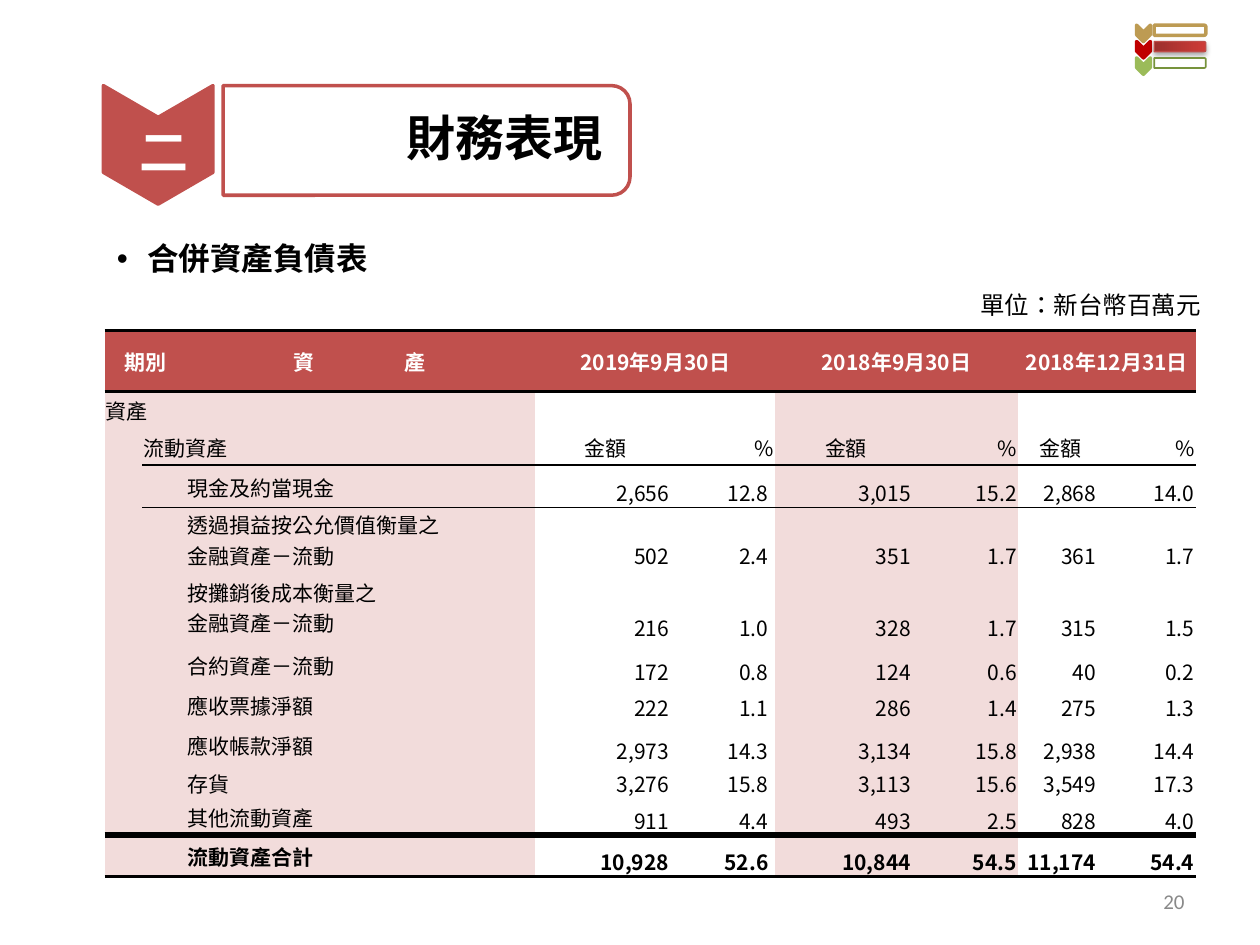
from lxml import etree
from pptx import Presentation
from pptx.dml.color import RGBColor
from pptx.enum.shapes import MSO_SHAPE as Shape
from pptx.enum.text import MSO_ANCHOR as Anchor, PP_ALIGN as Align
from pptx.oxml.ns import qn
from pptx.util import Inches, Pt

FONT = "Noto Sans CJK SC"
RED, PINK, WHITE, BLACK = "C0504D", "F2DCDB", "FFFFFF", "000000"
GOLD, GREEN, DARK_GREEN = "BD9B53", "9BBB59", "77933C"
NO_STYLE = "{2D5ABB26-0587-4C30-8999-92F81FD0307C}"

COLUMNS = [0.3, 0.35, 2.77, 1.11, 0.79, 1.13, 0.8, 0.67, 0.74]
ROW_HEIGHTS = [0.49, 0.29, 0.29, 0.34, 0.5, 0.57, 0.35, 0.29, 0.34, 0.26, 0.29, 0.33]
PERIODS = ["2019年9月30日", "2018年9月30日", "2018年12月31日"]
ASSETS = [
    ("現金及約當現金", "2,656", "12.8", "3,015", "15.2", "2,868", "14.0"),
    ("透過損益按公允價值衡量之\n金融資產－流動", "502", "2.4", "351", "1.7", "361", "1.7"),
    ("按攤銷後成本衡量之\n金融資產－流動", "216", "1.0", "328", "1.7", "315", "1.5"),
    ("合約資產－流動", "172", "0.8", "124", "0.6", "40", "0.2"),
    ("應收票據淨額", "222", "1.1", "286", "1.4", "275", "1.3"),
    ("應收帳款淨額", "2,973", "14.3", "3,134", "15.8", "2,938", "14.4"),
    ("存貨", "3,276", "15.8", "3,113", "15.6", "3,549", "17.3"),
    ("其他流動資產", "911", "4.4", "493", "2.5", "828", "4.0"),
    ("流動資產合計", "10,928", "52.6", "10,844", "54.5", "11,174", "54.4"),
]


def color(value):
    return RGBColor.from_string(value)


def add_xml(parent, tag, **attributes):
    return etree.SubElement(parent, qn(tag), {k: str(v) for k, v in attributes.items()})


def write(frame, text, size=12, font=FONT, ink=BLACK, bold=False, align=Align.LEFT,
          anchor=Anchor.TOP, spacing=None, bullet=None, tab=None):
    """Fill a text frame, one paragraph for each line of text."""
    frame.vertical_anchor = anchor
    for index, line in enumerate(text.split("\n")):
        para = frame.paragraphs[0] if index == 0 else frame.add_paragraph()
        para.alignment = align
        if spacing:
            para.line_spacing = spacing
        properties = para._p.get_or_add_pPr()
        if bullet:
            properties.set("marL", str(Inches(0.24)))
            properties.set("indent", str(-Inches(0.24)))
            add_xml(properties, "a:buFont", typeface="Arial")
            add_xml(properties, "a:buChar", char=bullet)
        if tab:
            add_xml(add_xml(properties, "a:tabLst"), "a:tab", pos=Inches(tab), algn="l")
        if not line:
            add_xml(para._p, "a:endParaRPr", sz=size * 100)
            continue
        span = para.add_run()
        span.text = line
        span.font.size, span.font.name, span.font.bold = Pt(size), font, bold
        span.font.color.rgb = color(ink)
        span.font._element.set("lang", "zh-TW")
        add_xml(span.font._element, "a:ea", typeface=font)


def add_text(page, box, text, margins=(0.1, 0.05, 0.1, 0.05), wrap=True, **style):
    frame = page.shapes.add_textbox(*map(Inches, box)).text_frame
    frame.word_wrap = wrap
    (frame.margin_left, frame.margin_top,
     frame.margin_right, frame.margin_bottom) = map(Inches, margins)
    write(frame, text, **style)


def add_turned(page, kind, box, fill=None, line=None, width=2, alpha=None):
    """Place a shape turned by 90 degrees so that it covers the given box."""
    left, top, wide, high = box
    shift = (wide - high) / 2
    shape = page.shapes.add_shape(
        kind, *map(Inches, (left + shift, top - shift, high, wide)))
    shape.rotation = 90
    shape.shadow.inherit = False
    if fill:
        shape.fill.solid()
        shape.fill.fore_color.rgb = color(fill)
        if alpha:
            tint = shape._element.spPr.find(".//" + qn("a:srgbClr"))
            add_xml(tint, "a:alpha", val=alpha * 1000)
    else:
        shape.fill.background()
    shape.line.color.rgb = color(line or fill)
    shape.line.width = Pt(width)
    return shape


def heading(page, left, top):
    # Rounded panel and title
    add_turned(page, Shape.ROUND_2_SAME_RECTANGLE, (left + 0.95, top, 3.23, 0.87),
               WHITE, RED, alpha=90)
    add_text(page, (left + 0.95, top, 4.66, 0.87), "財務表現", (1.46, 0.02, 0.02, 0.02),
             size=28, bold=True, anchor=Anchor.MIDDLE, spacing=0.9)
    # Chevron with the section number
    chevron = add_turned(page, Shape.CHEVRON, (left, top, 0.87, 0.94), RED)
    chevron.adjustments[0] = 0.29
    add_text(page, (left - 0.23, top + 0.32, 1.42, 0.45), "二", (0.02,) * 4, size=28,
             ink=WHITE, bold=True, align=Align.CENTER, anchor=Anchor.MIDDLE, spacing=0.9)


def section_marker(page, left, top):
    rows = [(GOLD, None, GOLD, 2), ("C00000", "CB3E3A", "BF4C48", 0.75),
            (GREEN, WHITE, DARK_GREEN, 1)]
    for index, (tip, fill, line, width) in enumerate(rows):
        y = top + 0.13 * index
        add_turned(page, Shape.CHEVRON, (left, y, 0.11, 0.13), tip)
        bar = add_turned(page, Shape.ROUND_2_SAME_RECTANGLE,
                         (left + 0.14, y, 0.41, 0.08), fill, line, width,
                         alpha=90 if fill == WHITE else None)
        if index == 1:  # current section: gradient and soft shadow
            bar.fill.gradient()
            bar.fill.gradient_angle = 90
            for stop, tint in zip(bar.fill.gradient_stops, ("9C2F2D", "CE3B37")):
                stop.color.rgb = color(tint)
            effects = bar._element.spPr.find(qn("a:effectLst"))
            shadow = add_xml(effects, "a:outerShdw", blurRad=Pt(3.1), dist=Pt(1.8),
                             dir=5400000, rotWithShape=0)
            add_xml(add_xml(shadow, "a:srgbClr", val=BLACK), "a:alpha", val=35000)


def cell_borders(row, column):
    """Widths of the top and bottom rules of a cell, in points."""
    last = len(ROW_HEIGHTS) - 1
    bottom = {0: 2, last - 1: 4, last: 2}.get(row)
    if row in (2, 3) and column > 0:
        bottom = 1
    return (("a:lnT", 2 if row == 0 else None), ("a:lnB", bottom))


def balance_sheet(page, left, top):
    table = page.shapes.add_table(
        len(ROW_HEIGHTS), len(COLUMNS), Inches(left), Inches(top),
        Inches(sum(COLUMNS)), Inches(sum(ROW_HEIGHTS))).table
    table.first_row = table.horz_banding = False
    table._tbl.tblPr.find(qn("a:tableStyleId")).text = NO_STYLE
    for column, width in zip(table.columns, COLUMNS):
        column.width = Inches(width)
    for row, height in zip(table.rows, ROW_HEIGHTS):
        row.height = Inches(height)

    # Text by row: header, group, subheader, then the assets
    header = ["期別", "", "資\t產"] + [text for name in PERIODS for text in (name, "")]
    rows = [header, ["資產"] + [""] * 8, ["", "流動資產", ""] + ["金額", "%"] * 3]
    rows += [["", "", *asset] for asset in ASSETS]
    for r, texts in enumerate(rows):
        for c, text in enumerate(texts):
            cell = table.cell(r, c)
            cell.margin_left = cell.margin_right = cell.margin_top = Inches(0.01)
            cell.margin_bottom = 0
            style = {"anchor": Anchor.MIDDLE, "bold": r in (0, len(rows) - 1)}
            if r == 0:
                style.update(ink=WHITE, align=Align.CENTER)
                if "\t" in text:
                    cell.margin_left = Inches(0.85)
                    style.update(align=Align.LEFT, tab=0.88)
            elif c > 2:
                amount = c % 2 == 1
                style["align"] = Align.CENTER if r == 2 and amount else Align.RIGHT
                if r > 2:
                    style["anchor"] = Anchor.BOTTOM
                    cell.margin_right = Inches(0.05 if amount or c == 4 else 0.01)
            write(cell.text_frame, text, **style)
            cell.vertical_anchor = style["anchor"]
            for tag, width in cell_borders(r, c):
                if width:
                    rule = add_xml(cell._tc.get_or_add_tcPr(), tag, w=Pt(width))
                    add_xml(add_xml(rule, "a:solidFill"), "a:srgbClr", val=BLACK)
            cell.fill.solid()
            shade = PINK if c < 3 or c in (5, 6) else WHITE
            cell.fill.fore_color.rgb = color(RED if r == 0 else shade)
    for r, c in [(0, 0), (0, 3), (0, 5), (0, 7), (1, 0), (2, 1)]:
        table.cell(r, c).merge(table.cell(r, c + 1))


def main():
    deck = Presentation()
    deck.slide_width, deck.slide_height = Inches(10), Inches(7.5)
    page = deck.slides.add_slide(deck.slide_layouts[6])
    add_text(page, (7.68, 2.25, 1.97, 0.39), "單位：新台幣百萬元", size=14, wrap=False)
    balance_sheet(page, 0.83, 2.62)
    add_text(page, (0.83, 1.85, 5.59, 0.4), "合併資產負債表", size=18, bold=True, bullet="•")
    heading(page, 0.82, 0.68)
    section_marker(page, 9.02, 0.2)
    add_text(page, (7.17, 6.95, 2.33, 0.4), "20", font="Calibri", ink="898989",
             align=Align.RIGHT, anchor=Anchor.MIDDLE)
    deck.save("out.pptx")


if __name__ == "__main__":
    main()
